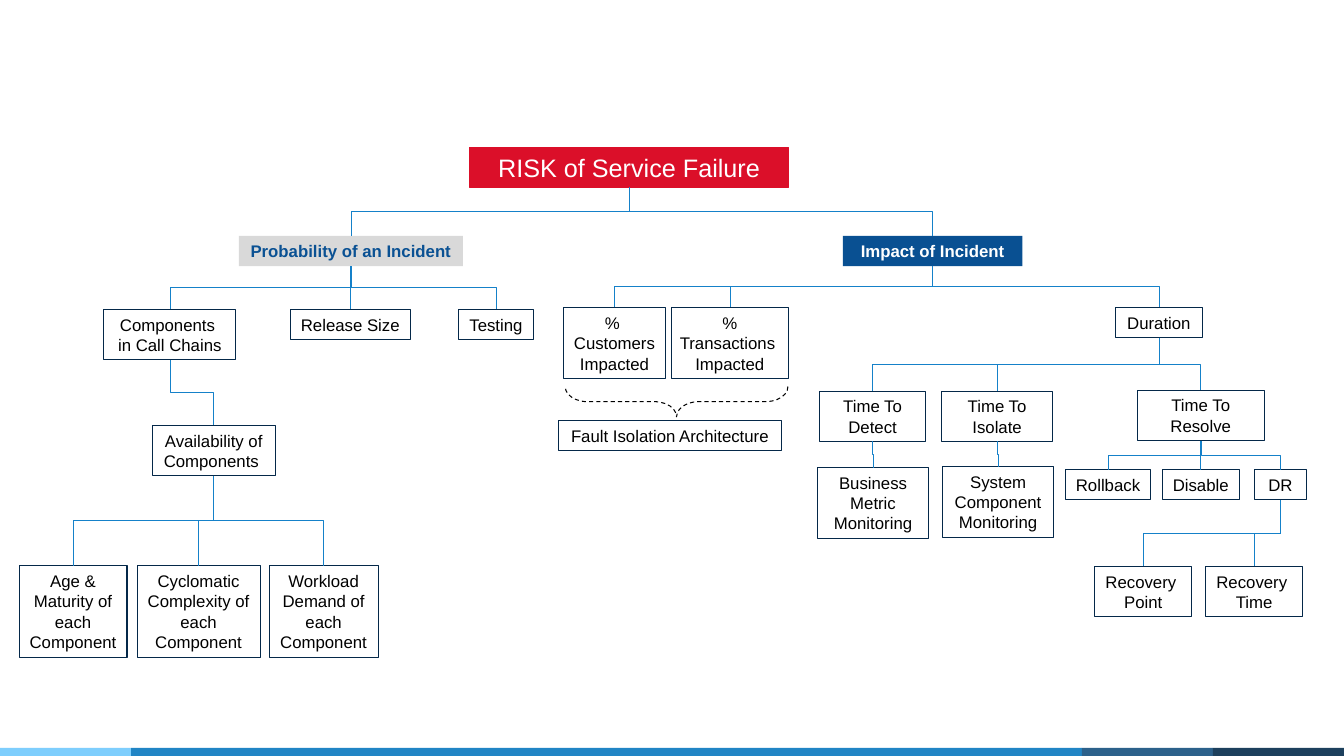
from dataclasses import dataclass
from lxml.etree import SubElement
from pptx import Presentation
from pptx.dml.color import RGBColor
from pptx.enum.dml import MSO_LINE_DASH_STYLE as Dash
from pptx.enum.shapes import MSO_CONNECTOR as Connector, MSO_SHAPE as Shape
from pptx.enum.text import MSO_ANCHOR as Anchor, PP_ALIGN as Align
from pptx.oxml.ns import qn
from pptx.util import Inches, Pt


@dataclass(frozen=True)
class Theme:
    """Colours, font and type sizes of the slide."""
    font: str = "Arial"
    title_size: int = 18
    body_size: int = 12
    text: str = "000000"
    white: str = "FFFFFF"
    outline: str = "042849"
    link: str = "1581C9"
    red: str = "DB0F29"
    grey: str = "D9D9D9"
    navy: str = "095092"
    navy_text: str = "0A5193"


THEME = Theme()

STYLES = {
    "risk": dict(fill=THEME.red, line=THEME.red, color=THEME.white, size=THEME.title_size),
    "probability": dict(fill=THEME.grey, line=None, color=THEME.navy_text, bold=True),
    "impact": dict(fill=THEME.navy, line=None, color=THEME.white, bold=True),
}

BOXES = [
    ("risk", None, "RISK of Service Failure", (4.66, 1.46, 3.16, 0.4)),
    ("probability", "risk", "Probability of an Incident", (2.37, 2.34, 2.22, 0.3)),
    ("impact", "risk", "Impact of Incident", (8.36, 2.34, 1.78, 0.3)),
    ("components", "probability", "Components \vin Call Chains", (1.03, 3.07, 1.31, 0.5)),
    ("release", "probability", "Release Size", (2.88, 3.07, 1.19, 0.3)),
    ("testing", "probability", "Testing", (4.55, 3.07, 0.74, 0.3)),
    ("availability", "components", "Availability of Components ", (1.51, 4.22, 1.22, 0.5)),
    ("age", "availability", "Age & Maturity of each Component", (0.19, 5.61, 1.07, 0.91)),
    ("complexity", "availability", "Cyclomatic Complexity of each Component",
     (1.36, 5.61, 1.22, 0.91)),
    ("workload", "availability", "Workload Demand of each Component", (2.67, 5.61, 1.08, 0.91)),
    ("customers", "impact", "% \vCustomers\nImpacted", (5.59, 3.05, 1.01, 0.71)),
    ("transactions", "impact", "%\vTransactions \nImpacted", (6.66, 3.05, 1.16, 0.71)),
    ("duration", "impact", "Duration", (11.06, 3.05, 0.87, 0.3)),
    ("detect", "duration", "Time To Detect", (8.13, 3.88, 1.05, 0.5)),
    ("isolate", "duration", "Time To Isolate", (9.34, 3.88, 1.1, 0.5)),
    ("resolve", "duration", "Time To Resolve", (11.28, 3.87, 1.26, 0.5)),
    ("business", "detect", "Business Metric Monitoring", (8.11, 4.64, 1.1, 0.7)),
    ("system", "isolate", "System Component Monitoring", (9.35, 4.63, 1.1, 0.7)),
    ("rollback", "resolve", "Rollback", (10.57, 4.66, 0.84, 0.3)),
    ("disable", "resolve", "Disable", (11.53, 4.66, 0.76, 0.3)),
    ("recovery", "resolve", "DR", (12.44, 4.66, 0.52, 0.3)),
    ("point", "recovery", "Recovery \vPoint", (10.86, 5.62, 0.96, 0.5)),
    ("time", "recovery", "Recovery \vTime", (11.96, 5.62, 0.96, 0.5)),
    ("isolation", None, "Fault Isolation Architecture", (5.54, 4.17, 2.21, 0.3)),
]

BRACE = (6.56, 2.88, 0.3, 2.21)
FOOTER_TOP, FOOTER_HEIGHT = 7.42, 0.09
FOOTER = [("7ECEFD", 1.3), ("2185C5", 9.43), ("2C618B", 1.3), ("1D405D", 1.3)]


def add_preset(slide, kind, place, fill=None, line=None):
    """Add a preset shape with plain fill and outline."""
    shape = slide.shapes.add_shape(kind, *map(Inches, place))
    shape.shadow.inherit = False
    if fill:
        shape.fill.solid()
        shape.fill.fore_color.rgb = RGBColor.from_string(fill)
    else:
        shape.fill.background()
    if line:
        shape.line.color.rgb = RGBColor.from_string(line)
        shape.line.width = Pt(0.75)
    else:
        shape.line.fill.background()
    return shape


def write(shape, text, size=THEME.body_size, color=THEME.text, bold=False, wrap=True):
    """Write centred text into a shape."""
    frame = shape.text_frame
    frame.word_wrap = wrap
    frame.vertical_anchor = Anchor.MIDDLE
    frame.text = text
    for paragraph in frame.paragraphs:
        paragraph.alignment = Align.CENTER
        for run in paragraph.runs:
            run.font.name = THEME.font
            run.font.size = Pt(size)
            run.font.bold = bold
            run.font.color.rgb = RGBColor.from_string(color)


def add_box(slide, text, place, fill=None, line=THEME.outline, **text_format):
    """Add a labelled rectangle that wraps only unbroken text in tall boxes."""
    box = add_preset(slide, Shape.RECTANGLE, place, fill, line)
    wrap = "\v" not in text and place[3] > 0.4
    write(box, text, wrap=wrap, **text_format)
    return box


def link(slide, parent, child):
    """Join a parent's bottom to a child's top with a vertical elbow."""
    start_x, start_y = parent.left + parent.width // 2, parent.top + parent.height
    end_x, end_y = child.left + child.width // 2, child.top
    drop, reach = end_y - start_y, abs(end_x - start_x)
    connector = slide.shapes.add_connector(Connector.ELBOW, start_x, start_y, end_x, end_y)
    connector.begin_connect(parent, 2)
    connector.end_connect(child, 0)
    connector.left = (start_x + end_x - drop) // 2
    connector.top = (start_y + end_y - reach) // 2
    connector.width, connector.height = drop, reach
    properties = connector._element.spPr
    transform = properties.find(qn("a:xfrm"))
    goes_right = end_x > start_x
    transform.set("rot", str((270 if goes_right else 90) * 60000))
    transform.set("flipH", "1" if goes_right else "0")
    transform.set("flipV", "0")
    connector.line.color.rgb = RGBColor.from_string(THEME.link)
    connector.line.width = Pt(0.5)
    SubElement(properties, qn("a:effectLst"))


def main():
    """Build the risk tree and save it."""
    presentation = Presentation()
    presentation.slide_width, presentation.slide_height = Inches(13.33), Inches(7.5)
    slide = presentation.slides.add_slide(presentation.slide_layouts[6])

    left = 0
    for color, width in FOOTER:
        add_preset(slide, Shape.RECTANGLE, (left, FOOTER_TOP, width, FOOTER_HEIGHT), fill=color)
        left += width

    brace = add_preset(slide, Shape.RIGHT_BRACE, BRACE, line=THEME.text)
    brace.rotation = 90
    brace.line.dash_style = Dash.DASH
    brace.adjustments[0], brace.adjustments[1] = 0.73, 0.5

    boxes = {}
    for name, parent, text, place in BOXES:
        boxes[name] = add_box(slide, text, place, **STYLES.get(name, {}))
        if parent:
            link(slide, boxes[parent], boxes[name])

    presentation.save("out.pptx")


if __name__ == "__main__":
    main()
